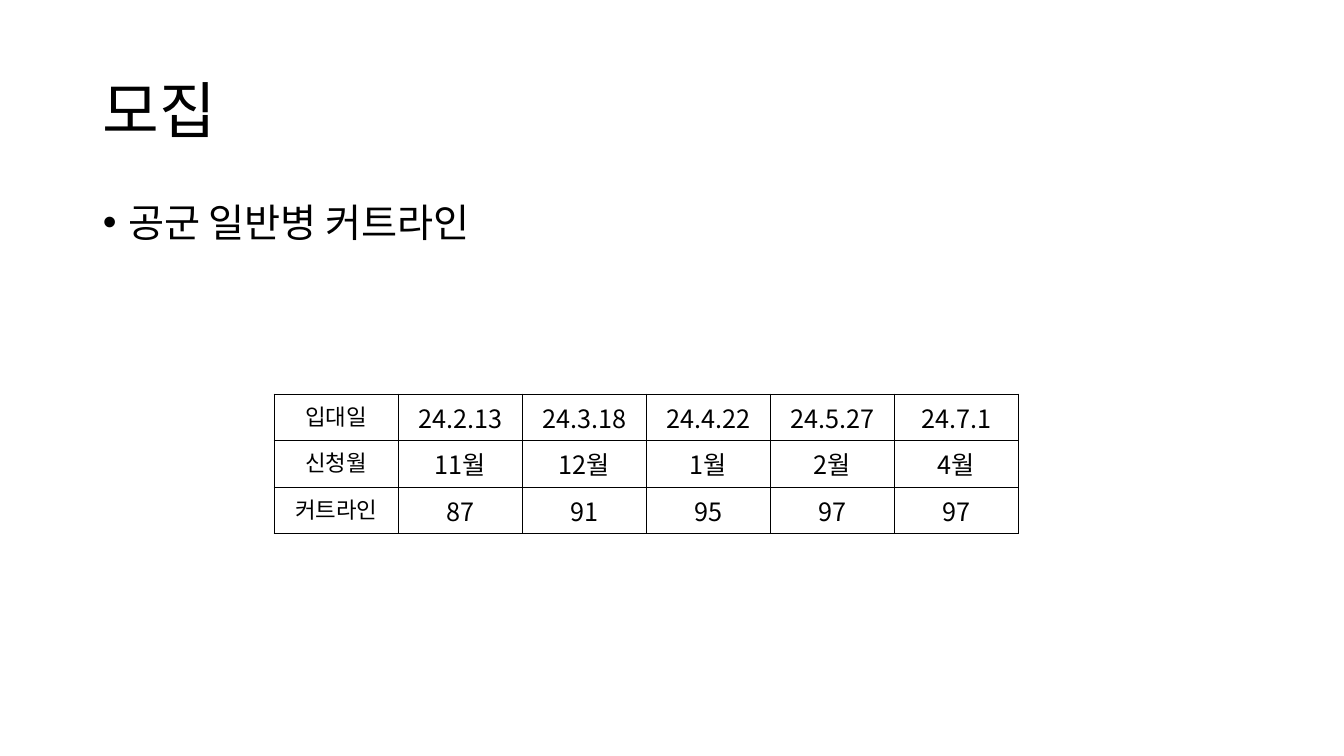
import pptx
import pptx.util
import pptx.dml.color
import pptx.enum.text
import pptx.oxml
import pptx.oxml.ns
from pptx.util import Inches, Pt

TITLE = "모집"
BODY = "공군 일반병 커트라인"
ROWS = [
    ("입대일", "24.2.13", "24.3.18", "24.4.22", "24.5.27", "24.7.1"),
    ("신청월", "11월", "12월", "1월", "2월", "4월"),
    ("커트라인", "87", "91", "95", "97", "97"),
]
FONT = "Noto Sans CJK KR"
COLORS = {"ink": "000000", "paper": "FFFFFF"}
TABLE_LEFT, TABLE_TOP = 2.72, 3.91
COL_W, ROW_H = 1.23, 0.41
ALIGN = pptx.enum.text.PP_ALIGN
ANCHOR = pptx.enum.text.MSO_ANCHOR


def node(xml):
    """Parse one DrawingML element, given without its namespace."""
    head, rest = xml.split(" ", 1)
    return pptx.oxml.parse_xml(f"{head} {pptx.oxml.ns.nsdecls('a')} {rest}")


def style(para, size, align):
    para.alignment = align
    for run in para.runs:
        font = run.font
        font.size = Pt(size)
        font.name = FONT
        font.color.rgb = pptx.dml.color.RGBColor.from_string(COLORS["ink"])
        latin = font._element.find(pptx.oxml.ns.qn("a:latin"))
        latin.addnext(node(f'<a:ea typeface="{FONT}"/>'))


def fill_holder(shape, text, box, size, anchor):
    shape.left, shape.top, shape.width, shape.height = map(Inches, box)
    frame = shape.text_frame
    frame.text = text
    frame.word_wrap = True
    frame.auto_size = pptx.enum.text.MSO_AUTO_SIZE.NONE
    frame.vertical_anchor = anchor
    para = frame.paragraphs[0]
    para.line_spacing = 0.9
    style(para, size, ALIGN.LEFT)
    return para


def add_bullet(para):
    para.space_before = Pt(10)
    props = para._p.get_or_add_pPr()
    props.set("marL", str(Inches(0.25)))
    props.set("indent", str(Inches(-0.25)))
    props.append(node('<a:buFont typeface="Arial"/>'))
    props.append(node('<a:buChar char="•"/>'))


def add_border(cell):
    props = cell._tc.get_or_add_tcPr()
    for spot, side in enumerate(("lnL", "lnR", "lnT", "lnB")):
        props.insert(spot, node(
            f'<a:{side} w="{Pt(1)}"><a:solidFill>'
            f'<a:srgbClr val="{COLORS["ink"]}"/></a:solidFill></a:{side}>'))


def add_grid(slide):
    count = len(ROWS[0])
    table = slide.shapes.add_table(
        len(ROWS), count, Inches(TABLE_LEFT), Inches(TABLE_TOP),
        Inches(COL_W * count), Inches(ROW_H * len(ROWS))).table
    table.first_row = table.horz_banding = False
    for col in table.columns:
        col.width = Inches(COL_W)
    for r, row in enumerate(ROWS):
        table.rows[r].height = Inches(ROW_H)
        for c, text in enumerate(row):
            cell = table.cell(r, c)
            cell.text_frame.text = text
            style(cell.text_frame.paragraphs[0], 16 if c == 0 else 18, ALIGN.CENTER)
            cell.fill.background()
            add_border(cell)


def main():
    deck = pptx.Presentation()
    deck.slide_width, deck.slide_height = Inches(13.33), Inches(7.5)
    slide = deck.slides.add_slide(deck.slide_layouts[1])
    back = slide.background.fill
    back.solid()
    back.fore_color.rgb = pptx.dml.color.RGBColor.from_string(COLORS["paper"])
    fill_holder(slide.shapes.title, TITLE, (0.92, 0.4, 11.5, 1.45), 44, ANCHOR.MIDDLE)
    body = slide.placeholders[1]
    add_bullet(fill_holder(body, BODY, (0.92, 1.97, 11.5, 0.58), 28, ANCHOR.TOP))
    add_grid(slide)
    deck.save("out.pptx")


if __name__ == "__main__":
    main()
